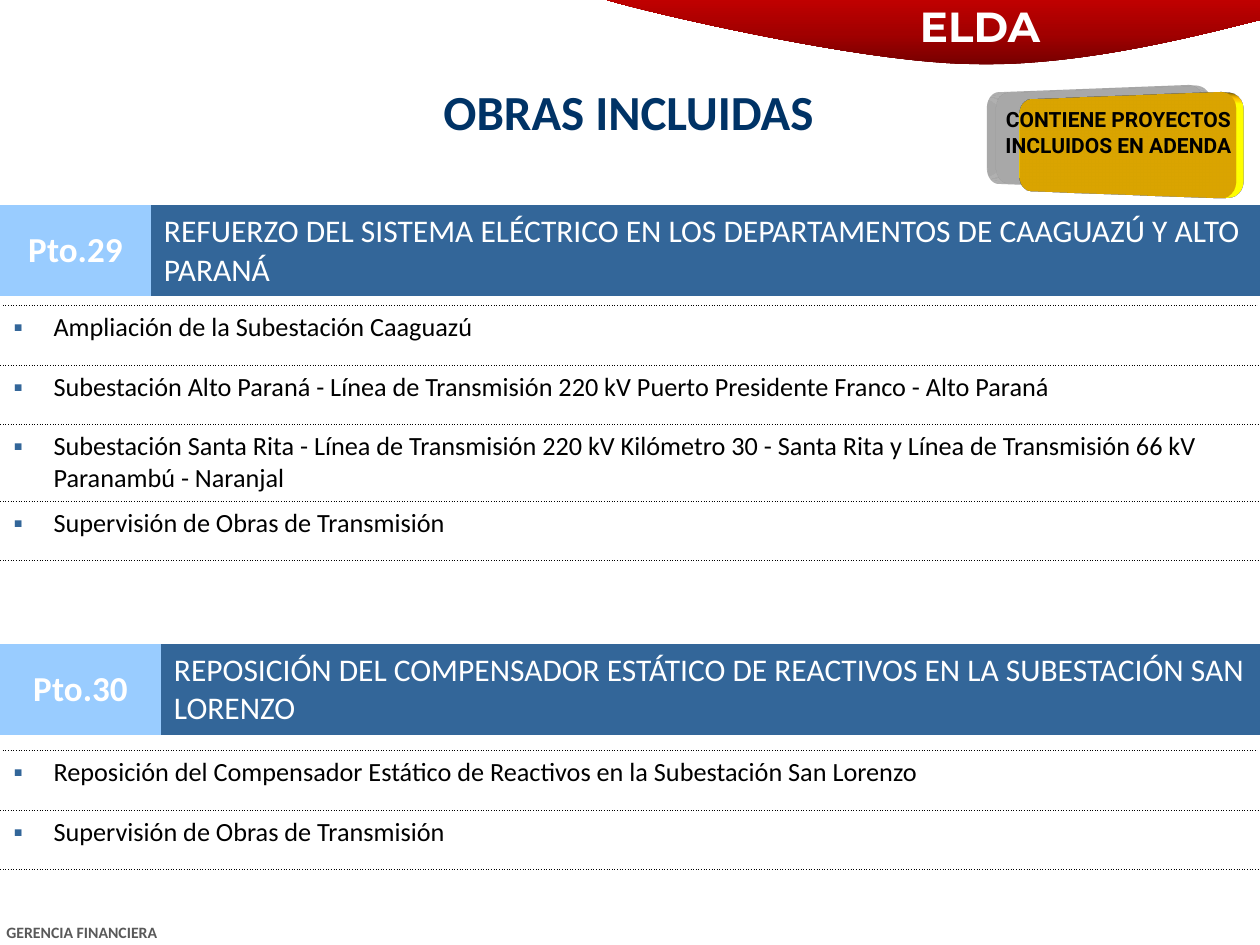
from copy import deepcopy
from dataclasses import dataclass

from lxml.etree import SubElement, fromstring
from pptx import Presentation
from pptx.dml.color import RGBColor as RGB
from pptx.enum.shapes import MSO_SHAPE as Preset
from pptx.enum.text import MSO_ANCHOR as Anchor, PP_ALIGN as Align
from pptx.oxml.ns import qn

EMU_PER_PX = 914400 / 126
NO_TABLE_STYLE = "{2D5ABB26-0587-4C30-8999-92F81FD0307C}"
DRAWING_NS = "http://schemas.openxmlformats.org/drawingml/2006/main"


@dataclass(frozen=True)
class Theme:
    banner: tuple = ("720000", "A20000", "C00000")
    white: str = "FFFFFF"
    black: str = "000000"
    title: str = "003366"
    footer: str = "595959"
    tag: str = "99CCFF"
    heading: str = "336699"
    badge: str = "FFC000"
    font: str = "Calibri"
    brand_font: str = "Montserrat"
    badge_font: str = "Roboto"
    title_size: int = 28
    brand_size: int = 24
    tag_size: int = 20
    heading_size: int = 18
    item_size: int = 15
    badge_size: int = 12
    footer_size: int = 9


THEME = Theme()


@dataclass(frozen=True)
class Label:
    text: str
    box: tuple[int, int, int, int]
    size: int
    color: str
    font: str = THEME.font
    align: Align = Align.CENTER


@dataclass(frozen=True)
class Section:
    tag: str
    heading: str
    heading_top: int
    tag_width: int
    items_top: int
    items: tuple[tuple[str, int], ...]  # text and row height


SECTIONS = (
    Section("Pto.29", "REFUERZO DEL SISTEMA ELÉCTRICO EN LOS DEPARTAMENTOS DE CAAGUAZÚ Y ALTO PARANÁ",
            205, 151, 305, (
                ("Ampliación de la Subestación Caaguazú", 60),
                ("Subestación Alto Paraná - Línea de Transmisión 220 kV Puerto Presidente Franco - Alto Paraná", 59),
                ("Subestación Santa Rita - Línea de Transmisión 220 kV Kilómetro 30 - Santa Rita y "
                 "Línea de Transmisión 66 kV Paranambú - Naranjal", 76),
                ("Supervisión de Obras de Transmisión", 59))),
    Section("Pto.30", "REPOSICIÓN DEL COMPENSADOR ESTÁTICO DE REACTIVOS EN LA SUBESTACIÓN SAN LORENZO",
            644, 161, 750, (
                ("Reposición del Compensador Estático de Reactivos en la Subestación San Lorenzo", 60),
                ("Supervisión de Obras de Transmisión", 59))),
)

LABELS = (
    Label("ELDA", (898, -6, 164, 63), THEME.brand_size, THEME.white, THEME.brand_font),
    Label("GERENCIA FINANCIERA", (-6, 917, 436, 32), THEME.footer_size, THEME.footer, align=Align.LEFT),
    Label("OBRAS INCLUIDAS", (0, 75, 1257, 69), THEME.title_size, THEME.title),
)
BADGE = Label("CONTIENE PROYECTOS INCLUIDOS EN ADENDA", (987, 96, 263, 98),
              THEME.badge_size, THEME.black, THEME.badge_font)

# Tilted slab with a soft shadow to the left
BADGE_EFFECTS = (
    '<a:effectLst><a:outerShdw blurRad="184150" dist="241300" dir="11520000" sx="110000" sy="110000" '
    'algn="ctr"><a:srgbClr val="000000"><a:alpha val="18000"/></a:srgbClr></a:outerShdw></a:effectLst>',
    '<a:scene3d><a:camera prst="perspectiveFront" fov="5100000"><a:rot lat="0" lon="2100000" rev="0"/>'
    '</a:camera><a:lightRig rig="flood" dir="t"><a:rot lat="0" lon="0" rev="13800000"/></a:lightRig></a:scene3d>',
    '<a:sp3d extrusionH="107950" prstMaterial="plastic"><a:bevelT w="82550" h="63500" prst="divot"/>'
    '<a:bevelB/></a:sp3d>',
)


def px(length: float) -> int:
    return round(length * EMU_PER_PX)


def element(xml: str):
    """Parse a drawing fragment, adding the namespace to its first tag."""
    end = min(xml.index(" ") if " " in xml else len(xml), xml.index(">"))
    return fromstring(f'{xml[:end]} xmlns:a="{DRAWING_NS}"{xml[end:]}')


def style_text(paragraph, size: int, color: str, font: str = THEME.font, bold: bool = False) -> None:
    for run in paragraph.runs:
        run.font.size = size * 12700
        run.font.name = font
        run.font.bold = bold
        run.font.color.rgb = RGB.from_string(color)


def write_label(frame, label: Label) -> None:
    frame.word_wrap = True
    frame.vertical_anchor = Anchor.TOP
    frame.text = label.text
    frame.paragraphs[0].alignment = label.align
    style_text(frame.paragraphs[0], label.size, label.color, label.font, bold=True)


def add_banner(slide) -> None:
    start = (604, -1)
    curves = [(641, 11), (859, 62), (969, 64), (1079, 68), (1211, 32), (1260, 20)]
    builder = slide.shapes.build_freeform(px(start[0]), px(start[1]))
    builder.add_line_segments([(px(x), px(y)) for x, y in curves + [(1260, 0)]], close=True)
    shape = builder.convert_to_shape()
    # Every three curve points become one Bézier segment
    segments = shape._element.spPr.findall(".//" + qn("a:lnTo"))
    for first in range(0, len(curves), 3):
        curve = element("<a:cubicBezTo></a:cubicBezTo>")
        segments[first].addprevious(curve)
        for segment in segments[first:first + 3]:
            curve.append(segment[0])
            segment.getparent().remove(segment)
    shape.shadow.inherit = False
    shape.line.fill.background()
    shape.fill.gradient()
    shape.fill.gradient_angle = 90
    stop_list = shape._element.spPr.find(".//" + qn("a:gsLst"))
    stop_list.insert(1, deepcopy(stop_list[0]))
    for stop, color, position in zip(shape.fill.gradient_stops, THEME.banner, (0, 0.5, 1)):
        stop.color.rgb = RGB.from_string(color)
        stop.position = position


def add_badge(slide) -> None:
    shape = slide.shapes.add_shape(Preset.FLOWCHART_ALTERNATE_PROCESS, *map(px, BADGE.box))
    shape.fill.solid()
    shape.fill.fore_color.rgb = RGB.from_string(THEME.badge)
    shape.line.fill.background()
    for effect in BADGE_EFFECTS:
        shape._element.spPr.append(element(effect))
    write_label(shape.text_frame, BADGE)


def add_plain_table(slide, box: tuple, widths: list[int], heights: list[int]):
    table = slide.shapes.add_table(len(heights), len(widths), *map(px, box)).table
    table.first_row = table.horz_banding = False
    table._tbl.tblPr.find(qn("a:tableStyleId")).text = NO_TABLE_STYLE
    for column, width in zip(table.columns, widths):
        column.width = px(width)
    for row, height in zip(table.rows, heights):
        row.height = px(height)
    return table


def add_heading(slide, section: Section) -> None:
    widths = [section.tag_width, 1260 - section.tag_width]
    table = add_plain_table(slide, (0, section.heading_top, 1260, 91), widths, [91])
    parts = ((section.tag, THEME.tag, THEME.tag_size, True),
             (section.heading, THEME.heading, THEME.heading_size, False))
    for cell, (text, fill, size, is_tag) in zip(table.rows[0].cells, parts):
        cell.fill.solid()
        cell.fill.fore_color.rgb = RGB.from_string(fill)
        cell.vertical_anchor = Anchor.MIDDLE
        cell.margin_left = cell.margin_right = cell.margin_top = px(1)
        cell.margin_bottom = 0
        cell.text_frame.text = text
        paragraph = cell.text_frame.paragraphs[0]
        if is_tag:
            paragraph.alignment = Align.CENTER
        else:
            paragraph._p.get_or_add_pPr().set("marL", str(px(12)))
        style_text(paragraph, size, THEME.white, bold=is_tag)


def add_borders(cell) -> None:
    sides = (("L", THEME.white, 12700, "solid"), ("R", THEME.white, 12700, "solid"),
             ("T", THEME.black, 3175, "sysDot"), ("B", THEME.black, 3175, "sysDot"))
    for index, (side, color, width, dash) in enumerate(sides):
        cell._tc.get_or_add_tcPr().insert(index, element(
            f'<a:ln{side} w="{width}"><a:solidFill><a:srgbClr val="{color}"/></a:solidFill>'
            f'<a:prstDash val="{dash}"/></a:ln{side}>'))


def add_items(slide, section: Section) -> None:
    heights = [height for _, height in section.items]
    table = add_plain_table(slide, (1, section.items_top, 1258, sum(heights)), [1258], heights)
    for row, (text, _) in zip(table.rows, section.items):
        cell = row.cells[0]
        cell.fill.background()
        add_borders(cell)
        cell.text_frame.text = text
        paragraph = cell.text_frame.paragraphs[0]
        properties = paragraph._p.get_or_add_pPr()
        properties.set("marL", str(px(40)))
        properties.set("indent", str(-px(40)))
        SubElement(SubElement(properties, qn("a:buClr")), qn("a:srgbClr")).set("val", THEME.heading)
        SubElement(properties, qn("a:buFont")).set("typeface", THEME.font)
        SubElement(properties, qn("a:buChar")).set("char", "▪")
        style_text(paragraph, THEME.item_size, THEME.black)


def main() -> None:
    presentation = Presentation()
    presentation.slide_width, presentation.slide_height = px(1260), px(945)
    slide = presentation.slides.add_slide(presentation.slide_layouts[6])
    # Top banner and numbered sections
    add_banner(slide)
    for section in SECTIONS:
        add_heading(slide, section)
        add_items(slide, section)
    # Badge, then all free text
    add_badge(slide)
    for label in LABELS:
        write_label(slide.shapes.add_textbox(*map(px, label.box)).text_frame, label)
    presentation.save("out.pptx")


if __name__ == "__main__":
    main()
